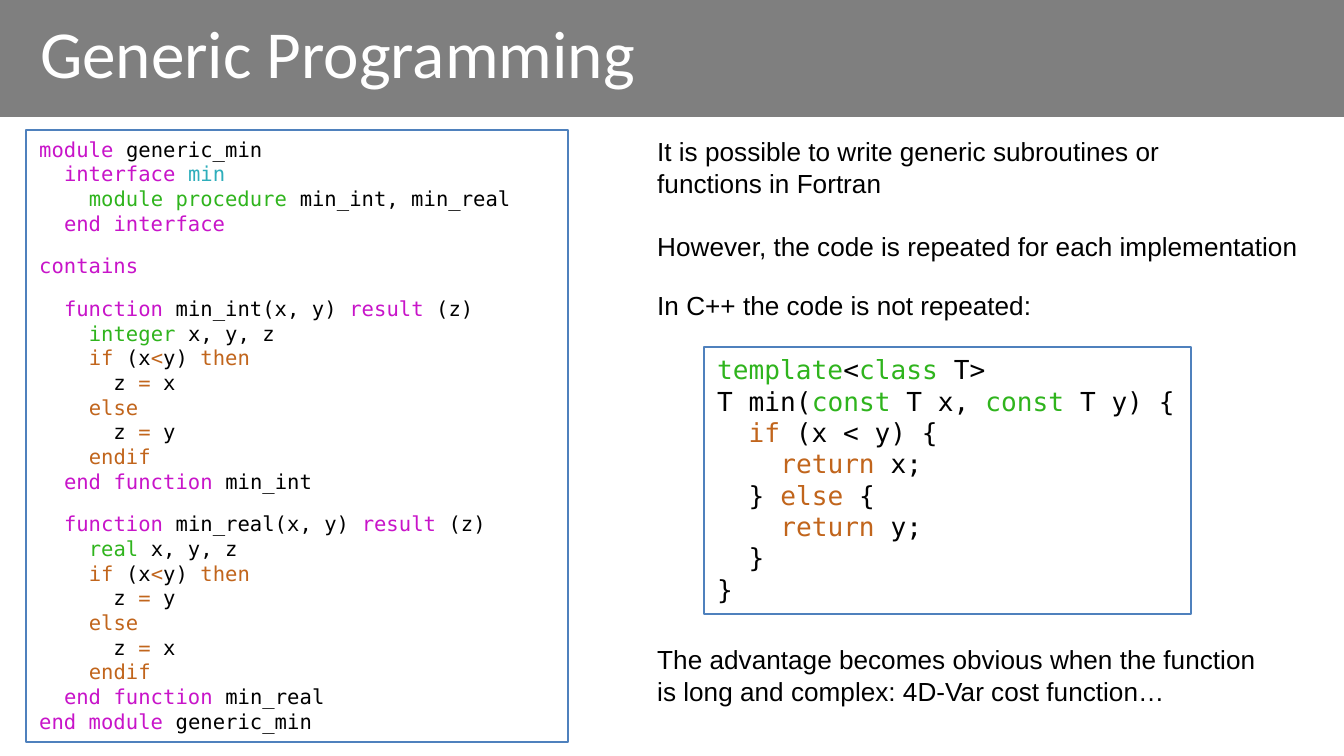
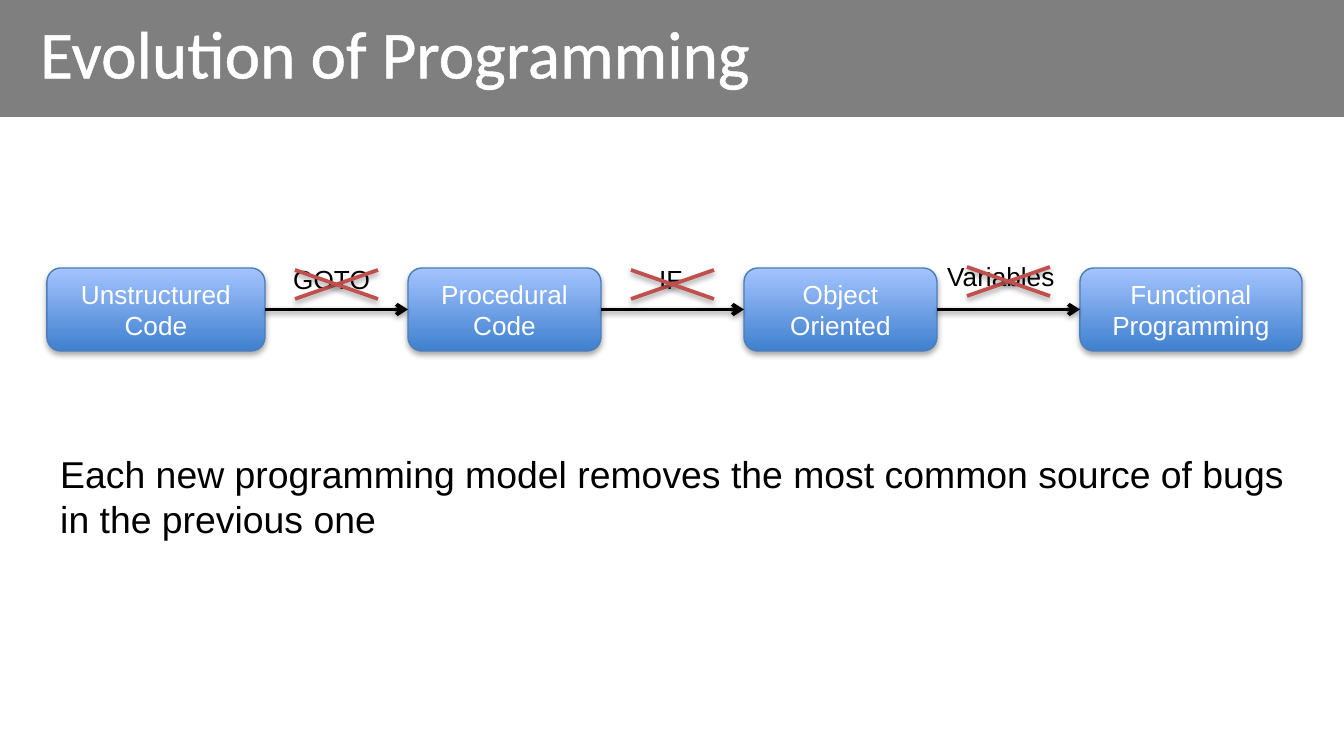
from dataclasses import dataclass
from itertools import pairwise

from lxml.etree import SubElement
from pptx import Presentation
from pptx.dml.color import RGBColor
from pptx.enum.shapes import MSO_CONNECTOR, MSO_SHAPE
from pptx.enum.text import MSO_ANCHOR, PP_ALIGN
from pptx.oxml import parse_xml
from pptx.oxml.ns import nsdecls, qn
from pptx.util import Emu, Pt

PX = 914400 / 134.4


@dataclass(frozen=True)
class Theme:
    black: str = "000000"
    white: str = "FFFFFF"
    code_frame: str = "4F81BD"
    stage_frame: str = "4B7EBC"
    stage_dark: str = "3F80CE"
    stage_light: str = "A4C4FF"
    cross: str = "C0504D"
    violet: str = "C814C9"
    teal: str = "2EAEBB"
    green: str = "2FB41D"
    brown: str = "C1651C"
    title_font: str = "Calibri"
    text_font: str = "Arial"
    code_font: str = "DejaVu Sans Mono"
    title_size: int = 36
    message_size: int = 20
    text_size: int = 14
    small_code_size: int = 11


THEME = Theme()
CODE_COLORS = {"v": THEME.violet, "t": THEME.teal, "g": THEME.green, "b": THEME.brown}


def fortran_min(name, kind, lesser, greater):
    return f"""\
  |v~function |{name}(x, y) |v~result| (z)
    |g~{kind}| x, y, z
    |b~if| (x|b~<|y) |b~then
      z |b~=| {lesser}
    |b~else
      z |b~=| {greater}
    |b~endif
  |v~end function |{name}"""


FORTRAN = f"""\
v~module |generic_min
  |v~interface |t~min
    |g~module procedure |min_int, min_real
  |v~end interface

v~contains

{fortran_min("min_int", "integer", "x", "y")}

{fortran_min("min_real", "real", "y", "x")}
v~end module |generic_min"""

CPP = """\
g~template|<|g~class| T>
T min(|g~const| T x, |g~const| T y) {
  |b~if| (x < y) {
    |b~return| x;
  } |b~else| {
    |b~return| y;
  }
}"""


def px(*lengths):
    return [Emu(round(length * PX)) for length in lengths]


def rgb(color):
    return RGBColor.from_string(color)


def add_span(para, text, size, color=THEME.black, font=THEME.text_font):
    span = para.add_run()
    span.text = text
    span.font.size = Pt(size)
    span.font.name = font
    span.font.color.rgb = rgb(color)
    return span


def paragraphs(frame, count):
    return [frame.paragraphs[0]] + [frame.add_paragraph() for _ in range(count - 1)]


def add_box(page, area, wrap=True):
    box = page.shapes.add_textbox(*px(*area))
    box.text_frame.word_wrap = wrap
    return box


def add_text(page, area, text, size=THEME.text_size, wrap=True):
    box = add_box(page, area, wrap)
    add_span(box.text_frame.paragraphs[0], text, size)


def add_code(page, area, code, size, wrap=True):
    """Code lines hold pieces split by |; a piece like v~word takes colour v."""
    box = add_box(page, area, wrap)
    box.line.color.rgb = rgb(THEME.code_frame)
    box.line.width = Pt(0.75)
    lines = code.split("\n")
    filled = [index for index, line in enumerate(lines) if line]
    for para, index in zip(paragraphs(box.text_frame, len(filled)), filled):
        if index and not lines[index - 1]:
            para.space_before = Pt(9.7)
        for piece in lines[index].split("|"):
            key, _, text = piece.rpartition("~")
            if text:
                add_span(para, text, size, CODE_COLORS.get(key, THEME.black), THEME.code_font)


def add_shadow(shape, opacity, distance):
    shape._element.spPr.append(parse_xml(
        f'<a:effectLst {nsdecls("a")}>'
        f'<a:outerShdw blurRad="40000" dist="{distance}" dir="5400000" rotWithShape="0">'
        f'<a:srgbClr val="{THEME.black}"><a:alpha val="{opacity * 1000}"/></a:srgbClr>'
        '</a:outerShdw></a:effectLst>'))


def add_line(page, start, end, color):
    line = page.shapes.add_connector(MSO_CONNECTOR.STRAIGHT, *px(*start, *end))
    line.line.color.rgb = rgb(color)
    line.line.width = Pt(2)
    add_shadow(line, 38, 20000)
    return line


def add_arrow(page, source, target):
    arrow = add_line(page, (0, 0), (1, 1), THEME.black)
    arrow.begin_connect(source, 3)
    arrow.end_connect(target, 1)
    SubElement(arrow.line._get_or_add_ln(), qn("a:tailEnd"), type="arrow")


def add_cross(page, left, top, width, height):
    right, bottom = left + width, top + height
    add_line(page, (left, bottom), (right, top), THEME.cross)
    add_line(page, (left, top), (right, bottom), THEME.cross)


def add_stage(page, left, width, lines):
    stage = page.shapes.add_shape(MSO_SHAPE.ROUNDED_RECTANGLE, *px(left, 268, width, 83))
    stage.fill.gradient()
    stage.fill.gradient_angle = 90
    for stop, color in zip(stage.fill.gradient_stops, (THEME.stage_dark, THEME.stage_light)):
        stop.color.rgb = rgb(color)
    stage.line.color.rgb = rgb(THEME.stage_frame)
    stage.line.width = Pt(0.75)
    add_shadow(stage, 35, 23000)
    frame = stage.text_frame
    frame.word_wrap = True
    frame.vertical_anchor = MSO_ANCHOR.MIDDLE
    for para, text in zip(paragraphs(frame, len(lines)), lines):
        para.alignment = PP_ALIGN.CENTER
        add_span(para, text, THEME.text_size, THEME.white)
    return stage


def add_page(deck, title):
    """Add a blank page with the grey title band; return it and the title run."""
    page = deck.slides.add_slide(deck.slide_layouts[6])
    band = page.shapes.add_shape(MSO_SHAPE.RECTANGLE, *px(0, 0, 1344, 117))
    band.shadow.inherit = False
    band.line.fill.background()
    band.fill.solid()
    band.fill.fore_color.rgb = rgb(THEME.black)
    fill_color = band._element.spPr.find(qn("a:solidFill"))[0]
    SubElement(fill_color, qn("a:alpha"), val="50000")
    box = add_box(page, (27, 0, 1121, 103))
    box.text_frame.vertical_anchor = MSO_ANCHOR.MIDDLE
    span = add_span(box.text_frame.paragraphs[0], title, THEME.title_size,
                    THEME.white, THEME.title_font)
    return page, span


def outline_text(span, color, width):
    span._r.get_or_add_rPr().insert(0, parse_xml(
        f'<a:ln {nsdecls("a")} w="{Pt(width)}"><a:solidFill>'
        f'<a:srgbClr val="{color}"/></a:solidFill></a:ln>'))


def generic_programming(deck):
    page, _ = add_page(deck, "Generic Programming")
    add_code(page, (26, 130, 542, 612), FORTRAN, THEME.small_code_size)

    intro = add_box(page, (644, 129, 688, 140))
    possible, however = paragraphs(intro.text_frame, 2)
    add_span(possible, "It is possible to write generic subroutines or", THEME.text_size)
    possible.add_line_break()
    add_span(possible, "functions in Fortran", THEME.text_size)
    however.space_before = Pt(17)
    add_span(however, "However, the code is repeated for each implementation", THEME.text_size)

    add_code(page, (704, 347, 487, 267), CPP, THEME.text_size, wrap=False)
    add_text(page, (644, 283, 544, 54), "In C++ the code is not repeated:")
    add_text(page, (644, 637, 642, 77),
             "The advantage becomes obvious when the function "
             "is long and complex: 4D-Var cost function…")


def evolution_of_programming(deck):
    page, title = add_page(deck, "Evolution of Programming")
    outline_text(title, THEME.white, 1.45)
    stages = [add_stage(page, left, width, lines) for left, width, lines in (
        (47, 218, ("Unstructured", "Code")),
        (408, 193, ("Procedural", "Code")),
        (744, 193, ("Object Oriented",)),
        (1080, 222, ("Functional", "Programming")),
    )]
    removed = (("GOTO", 280, 257, 110), ("IF", 646, 257, 51), ("Variables", 934, 254, 155))
    for step, ((source, target), (word, left, top, width)) in enumerate(
            zip(pairwise(stages), removed)):
        add_arrow(page, source, target)
        add_text(page, (left, top, width, 54), word, wrap=False)
        add_cross(page, 295 + 336 * step, top + 13, 83, 29)
    add_text(page, (47, 445, 1254, 103),
             "Each new programming model removes the most common source of bugs "
             "in the previous one", THEME.message_size)


def main():
    deck = Presentation()
    deck.slide_width, deck.slide_height = px(1344, 756)
    generic_programming(deck)
    evolution_of_programming(deck)
    deck.save("out.pptx")


if __name__ == "__main__":
    main()
